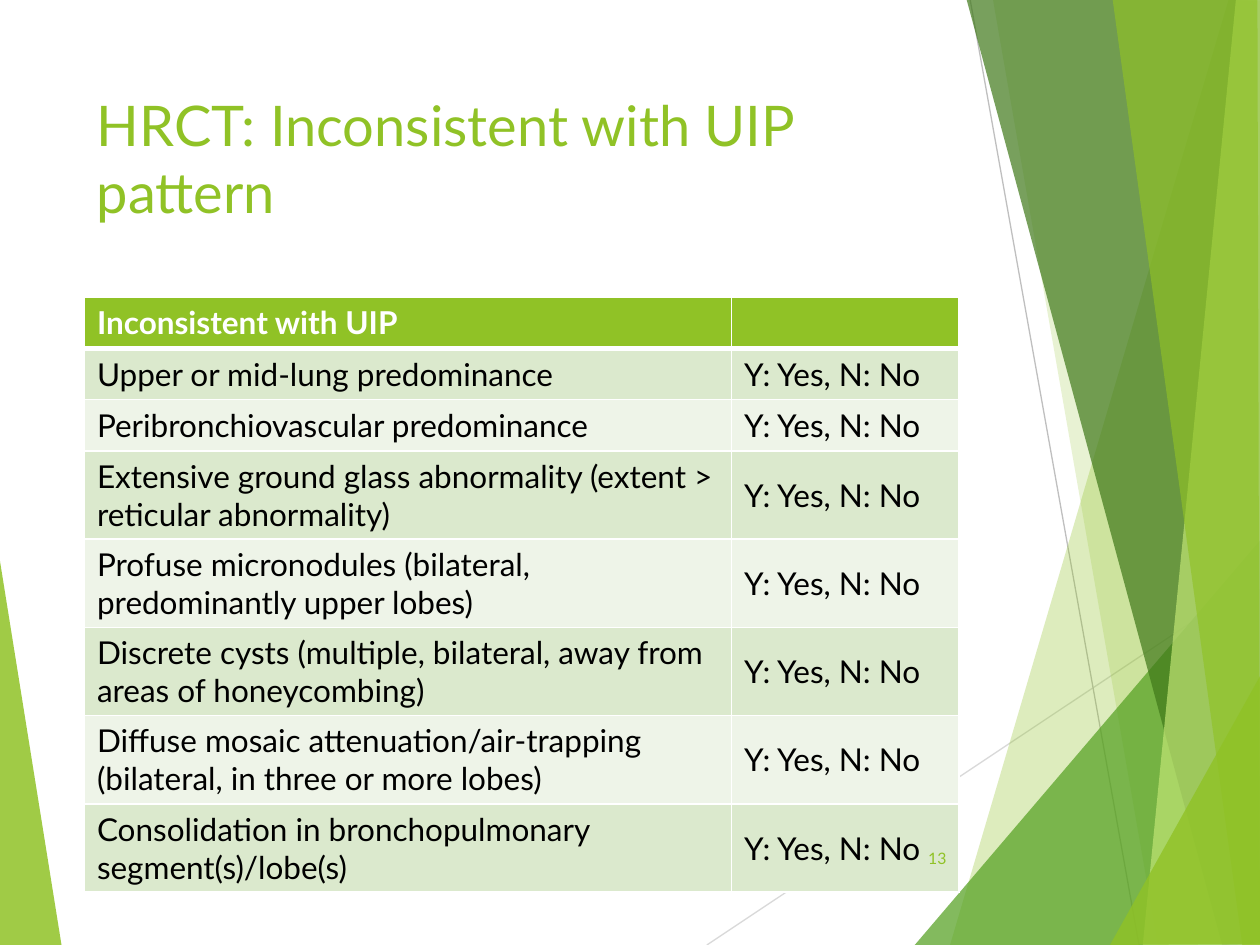
from collections import namedtuple

from pptx import Presentation
from pptx.dml.color import RGBColor
from pptx.enum.shapes import MSO_CONNECTOR as Connector
from pptx.enum.text import MSO_ANCHOR as Anchor, PP_ALIGN as Align
from pptx.oxml.ns import qn
from pptx.oxml.xmlchemy import OxmlElement as make_element
from pptx.util import Inches, Pt

# The slide is a grid of 100 columns by 75 rows of square cells
COLUMNS, ROWS = 100, 75
CELL = Inches(10) // COLUMNS
FONT = "Lato"
COLORS = {
    "lime": "90C226", "green": "54A021", "forest": "3F7819", "pale": "C0E474",
    "white": "FFFFFF", "black": "000000", "band": "DBE9CD", "light": "EEF4E8",
    "grey": "D9D9D9", "dark_grey": "BFBFBF",
}
Box = namedtuple("Box", "left top width height")

LINES = [
    ("grey", (56.1, 75), (100.1, 45.7)),
    ("dark_grey", (77, 0), (90.4, 75)),
]
# Colour, opacity in percent, corners
LEFT_FACET = ("lime", 85, [(-0.1, 43.9), (4.9, 75.1), (-0.1, 75)])
RIGHT_FACETS = [
    ("lime", 30, [(97.5, 0), (75.4, 75), (100.2, 75.1), (100.1, 0.1)]),
    ("lime", 20, [(78.8, -0.1), (91.9, 75), (100.1, 75), (100.1, -0.1)]),
    ("green", 72, [(72.6, 75), (100, 42.9), (100.1, 75)]),
    ("forest", 70, [(76.7, -0.1), (97, 75), (100.1, 74.9), (100.1, -0.1)]),
    ("pale", 70, [(98.1, -0.1), (90.7, 75), (100.1, 75), (100, -0.1)]),
    ("lime", 65, [(88.3, -0.1), (98.6, 75), (100, 75), (99.8, -0.1)]),
    ("lime", 80, [(88.1, 75), (100.1, 53.5), (100.1, 74.9)]),
]

HEADING = "Inconsistent with UIP"
ANSWER = "Y: Yes, N: No"
FINDINGS = [  # Text, lines it takes
    ("Upper or mid-lung predominance", 1),
    ("Peribronchiovascular predominance", 1),
    ("Extensive ground glass abnormality (extent > reticular abnormality)", 2),
    ("Profuse micronodules (bilateral, predominantly upper lobes)", 2),
    ("Discrete cysts (multiple, bilateral, away from areas of honeycombing)", 2),
    ("Diffuse mosaic attenuation/air-trapping (bilateral, in three or more lobes)", 2),
    ("Consolidation in bronchopulmonary segment(s)/lobe(s)", 2),
]
ROW_HEIGHTS = {1: 4.06, 2: 7}
ANSWER_SHARE = 0.26


def grid(*values):
    return [round(value * CELL) for value in values]


def rgb(name):
    return RGBColor.from_string(COLORS[name])


def write(frame, text, color, size, bold=False, align=Align.LEFT):
    para = frame.paragraphs[0]
    para.alignment = align
    span = para.add_run()
    span.text = text
    for name, value in {"name": FONT, "size": Pt(size), "bold": bold}.items():
        setattr(span.font, name, value)
    span.font.color.rgb = rgb(color)


def add_text(page, box, text, anchor, **style):
    frame = page.shapes.add_textbox(*grid(*box)).text_frame
    frame.word_wrap = True
    frame.vertical_anchor = anchor
    write(frame, text, **style)


def add_facet(page, box, color, opacity, corners):
    points = [grid(box.left + x, box.top + y) for x, y in corners]
    builder = page.shapes.build_freeform(*points[0], scale=1.0)
    builder.add_line_segments(points[1:], close=True)
    shape = builder.convert_to_shape()
    shape.shadow.inherit = False
    shape.line.fill.background()
    shape.fill.solid()
    shape.fill.fore_color.rgb = rgb(color)
    alpha = make_element("a:alpha")
    alpha.set("val", str(opacity * 1000))
    shape._element.spPr.find(".//" + qn("a:srgbClr")).append(alpha)


def add_line(page, box, color, start, end):
    ends = [box.left + start[0], box.top + start[1],
            box.left + end[0], box.top + end[1]]
    line = page.shapes.add_connector(Connector.STRAIGHT, *grid(*ends))
    line.line.color.rgb = rgb(color)
    line.line.width = Pt(0.75)
    line._element.spPr.append(make_element("a:effectLst"))


def add_backdrop(page, box):
    add_facet(page, box, *LEFT_FACET)
    for line in LINES:
        add_line(page, box, *line)
    for facet in RIGHT_FACETS:
        add_facet(page, box, *facet)


def add_borders(cell, widths):
    properties = cell._tc.get_or_add_tcPr()
    for side, width in widths.items():
        border = make_element("a:ln" + side)
        border.set("w", str(Pt(width)))
        fill = make_element("a:solidFill")
        color = make_element("a:srgbClr")
        color.set("val", COLORS["white"])
        fill.append(color)
        border.append(fill)
        properties.append(border)


def add_findings(page, box):
    rows = [(HEADING, "", 1)] + [(text, ANSWER, lines) for text, lines in FINDINGS]
    table = page.shapes.add_table(len(rows), 2, *grid(*box)).table
    shares = [1 - ANSWER_SHARE, ANSWER_SHARE]
    for column, share in zip(table.columns, shares):
        column.width = grid(box.width * share)[0]
    for index, (*texts, lines) in enumerate(rows):
        header = index == 0
        table.rows[index].height = grid(ROW_HEIGHTS[lines])[0]
        fill = "lime" if header else ("light", "band")[index % 2]
        for column, text in enumerate(texts):
            cell = table.cell(index, column)
            # A thicker rule separates the header from the body
            add_borders(cell, {"L": 1, "R": 1, "T": 3 if index == 1 else 1,
                               "B": 3 if header else 1})
            cell.fill.solid()
            cell.fill.fore_color.rgb = rgb(fill)
            cell.vertical_anchor = Anchor.TOP if header else Anchor.MIDDLE
            if text:
                write(cell.text_frame, text, "white" if header else "black",
                      18, bold=header)


def main():
    deck = Presentation()
    deck.slide_width, deck.slide_height = grid(COLUMNS, ROWS)
    page = deck.slides.add_slide(deck.slide_layouts[6])
    page.background.fill.solid()
    page.background.fill.fore_color.rgb = rgb("white")

    add_backdrop(page, Box(0, 0, COLUMNS, ROWS))
    # Title
    add_text(page, Box(6.7, 6.7, 69.4, 14.4), "HRCT: Inconsistent with UIP pattern",
             Anchor.TOP, color="lime", size=32)
    add_findings(page, Box(6.7, 23.6, 69.4, 47.2))
    # Page number
    add_text(page, Box(70.5, 66.1, 5.6, 4), "13", Anchor.MIDDLE,
             color="lime", size=9, align=Align.RIGHT)
    deck.save("out.pptx")


if __name__ == "__main__":
    main()
